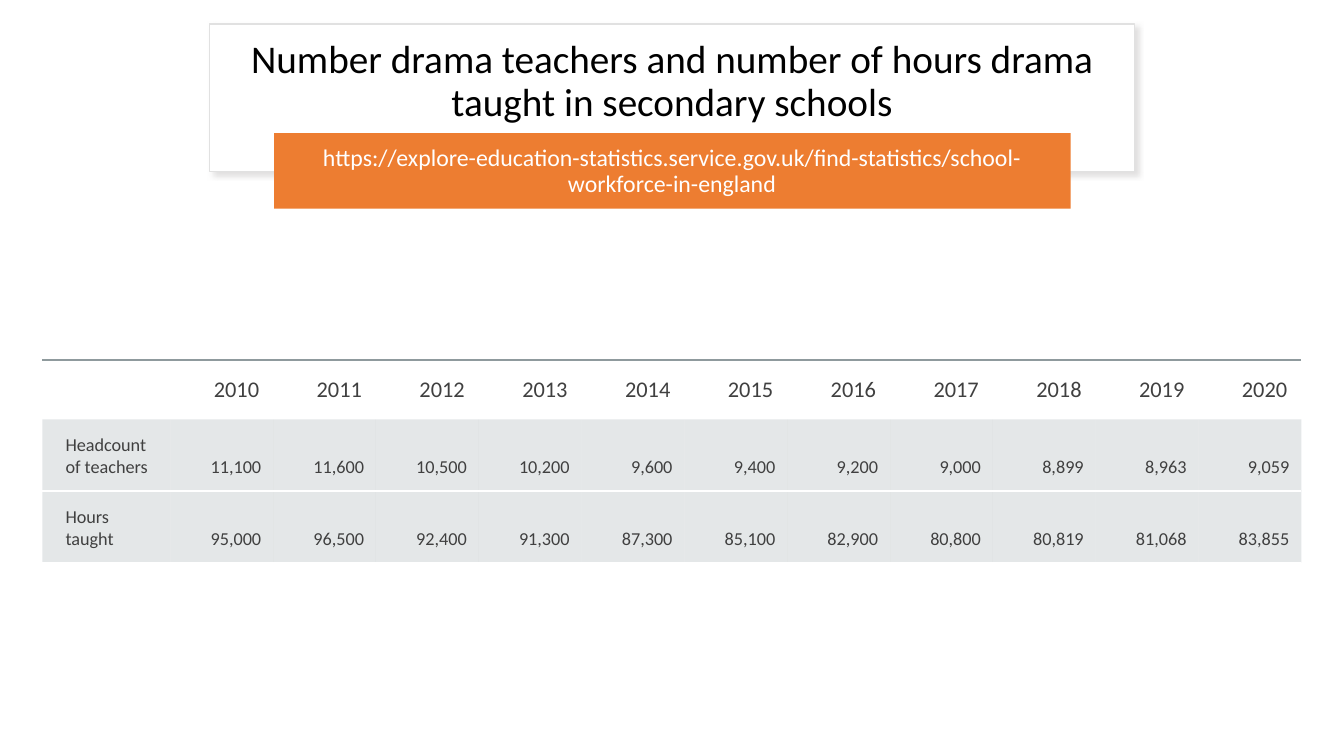
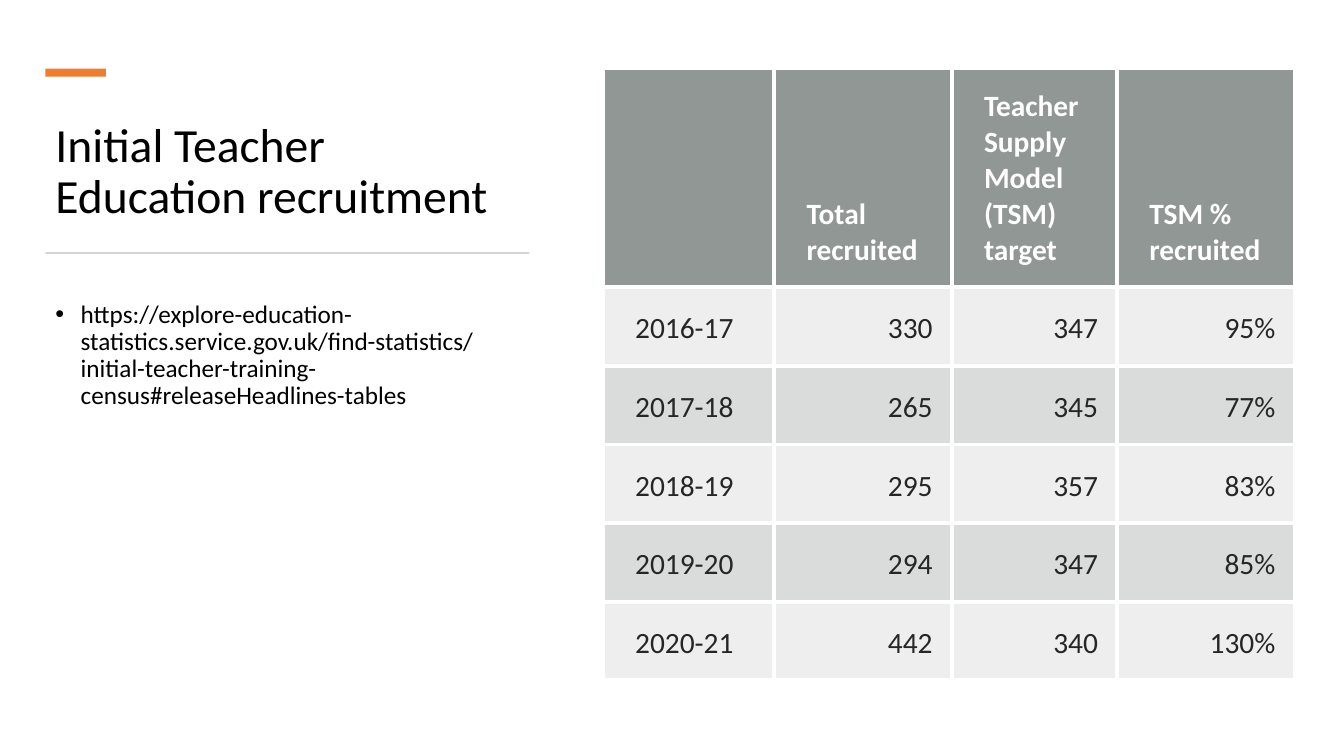
from lxml.etree import SubElement
from pptx import Presentation
from pptx.dml.color import RGBColor
from pptx.enum.shapes import MSO_SHAPE
from pptx.enum.text import MSO_ANCHOR, MSO_AUTO_SIZE, PP_ALIGN
from pptx.oxml import parse_xml
from pptx.oxml.ns import nsdecls, qn
from pptx.util import Pt

# Style: 100 px to the inch
PX = 9144
FONT = "Calibri"
NO_GRID = "{2D5ABB26-0587-4C30-8999-92F81FD0307C}"
BLACK = RGBColor(0x00, 0x00, 0x00)
WHITE = RGBColor(0xFF, 0xFF, 0xFF)
ORANGE = RGBColor(0xED, 0x7D, 0x31)
EDGE = RGBColor(0xE1, 0xE1, 0xE1)
SHADE = RGBColor(0xC5, 0xC3, 0xC3)
RULE = RGBColor(0xD5, 0xD5, 0xD5)
STEEL = RGBColor(0x8F, 0x9A, 0x9D)
MIST = RGBColor(0xB4, 0xBC, 0xBE)
SLATE = RGBColor(0x63, 0x6B, 0x68)
SAGE = RGBColor(0x87, 0x8E, 0x8B)
GREY = RGBColor(0x40, 0x40, 0x40)
INK = RGBColor(0x26, 0x26, 0x26)
LEFT, MID, RIGHT = PP_ALIGN.LEFT, PP_ALIGN.CENTER, PP_ALIGN.RIGHT


class Deck:
    def __init__(self, wide, high):
        self.show = Presentation()
        self.show.slide_width = wide * PX
        self.show.slide_height = high * PX
        self.slide = None

    def page(self):
        self.slide = self.show.slides.add_slide(self.show.slide_layouts[1])

    def style(self, para, size, color, align, bold=False):
        para.alignment = align
        for run in para.runs:
            font = run.font
            font.name, font.size, font.bold = FONT, Pt(size), bold
            font.color.rgb = color

    def box(self, x, y, wide, high, fill, line=None, shade=None):
        """Rectangle with an optional outline and soft shadow."""
        box = self.slide.shapes.add_shape(
            MSO_SHAPE.RECTANGLE, x * PX, y * PX, wide * PX, high * PX)
        box.shadow.inherit = False
        box.fill.solid()
        box.fill.fore_color.rgb = fill
        if line:
            box.line.color.rgb = line
            box.line.width = Pt(1)
        else:
            box.line.fill.background()
        if shade:
            glow = box.element.spPr.find(qn("a:effectLst"))
            glow.append(parse_xml(
                f'<a:outerShdw {nsdecls("a")} blurRad="{Pt(4)}" dist="{Pt(3)}" '
                f'dir="2700000" algn="tl" rotWithShape="0"><a:srgbClr val="{shade}">'
                '<a:alpha val="50000"/></a:srgbClr></a:outerShdw>'))

    def hold(self, slot, area, text, size, color, align, anchor):
        """Fill a placeholder and bring it to the front."""
        hold = self.slide.placeholders[slot]
        hold.left, hold.top, hold.width, hold.height = (n * PX for n in area)
        self.slide.shapes.element.append(hold.element)
        frame = hold.text_frame
        frame.text = text
        frame.word_wrap = True
        frame.auto_size = MSO_AUTO_SIZE.NONE
        frame.vertical_anchor = anchor
        para = frame.paragraphs[0]
        para.line_spacing = 0.9
        self.style(para, size, color, align)
        return para

    def title(self, area, text, size, align, anchor):
        self.hold(0, area, text, size, BLACK, align, anchor)

    def body(self, area, text, size, color, align, anchor, dot=False):
        para = self.hold(1, area, text, size, color, align, anchor)
        para.space_before = Pt(10)
        props = para._p.get_or_add_pPr()
        dent = 25 * PX if dot else 0
        props.set("marL", str(dent))
        props.set("indent", str(-dent))
        if dot:
            SubElement(props, qn("a:buFont"), typeface="Arial")
            SubElement(props, qn("a:buChar"), char="•")
        else:
            SubElement(props, qn("a:buNone"))

    def table(self, x, y, cols, rows):
        """Plain table without grid lines."""
        frame = self.slide.shapes.add_table(
            len(rows), len(cols), x * PX, y * PX, sum(cols) * PX, sum(rows) * PX)
        table = frame.table
        table.first_row = table.horz_banding = False
        frame.element.find(".//" + qn("a:tableStyleId")).text = NO_GRID
        for col, wide in zip(table.columns, cols):
            col.width = wide * PX
        for row, high in zip(table.rows, rows):
            row.height = high * PX
        return table

    def cell(self, cell, text, size, color, align, anchor, pads, fill=None,
             alpha=100, lines=None, bold=False):
        """Pads are left and other sides; lines map a side to its pen."""
        side, rest = (n * PX for n in pads)
        if text:
            cell.margin_left = side
            cell.margin_right = cell.margin_top = cell.margin_bottom = rest
            cell.vertical_anchor = anchor
            cell.text_frame.text = text
            self.style(cell.text_frame.paragraphs[0], size, color, align, bold)
        props = cell._tc.get_or_add_tcPr()
        if fill:
            cell.fill.solid()
            cell.fill.fore_color.rgb = fill
            tint = props.find(".//" + qn("a:srgbClr"))
            SubElement(tint, qn("a:alpha"), val=str(alpha * 1000))
        else:
            cell.fill.background()
        lines = lines or {}
        sides = [side for side in "LRTB" if side in lines]
        for spot, side in enumerate(sides):
            pen, width, clear = lines[side]
            props.insert(spot, parse_xml(
                f'<a:ln{side} {nsdecls("a")} w="{Pt(width)}"><a:solidFill>'
                f'<a:srgbClr val="{pen}"><a:alpha val="{clear * 1000}"/></a:srgbClr>'
                f'</a:solidFill><a:prstDash val="solid"/></a:ln{side}>'))


# Slide 1: teachers and hours by year
def hours(deck):
    deck.page()
    deck.box(208, 24, 917, 146, WHITE, EDGE, SHADE)
    deck.title((230, 34, 873, 95),
               "Number drama teachers and number of hours drama taught in secondary schools",
               28, MID, MSO_ANCHOR.MIDDLE)
    deck.box(272, 132, 790, 75, ORANGE)
    deck.body((286, 138, 761, 65),
              "https://explore-education-statistics.service.gov.uk/"
              "find-statistics/school-workforce-in-england",
              17, WHITE, MID, MSO_ANCHOR.MIDDLE)

    data = [
        ["", *(str(year) for year in range(2010, 2021))],
        ["Headcount of teachers", "11,100", "11,600", "10,500", "10,200", "9,600",
         "9,400", "9,200", "9,000", "8,899", "8,963", "9,059"],
        ["Hours taught", "95,000", "96,500", "92,400", "91,300", "87,300",
         "85,100", "82,900", "80,800", "80,819", "81,068", "83,855"],
    ]
    table = deck.table(42, 357, [127] + [102] * 11, [59, 71, 71])
    white = (WHITE, 1.5, 100)
    for r, row in enumerate(data):
        for c, text in enumerate(row):
            cell, align = table.cell(r, c), RIGHT if c else LEFT
            if r == 0:
                deck.cell(cell, text, 16, GREY, align, MSO_ANCHOR.MIDDLE, (23, 14),
                          lines={"T": (STEEL, 1.5, 60)})
            else:
                lines = {"B": white} if r == 1 else {"T": white, "B": white}
                deck.cell(cell, text, 13, GREY, align, MSO_ANCHOR.BOTTOM, (23, 12),
                          MIST, 35, lines)


# Slide 2: recruitment against target
def recruits(deck):
    deck.page()
    deck.title((45, 108, 486, 119), "Initial Teacher Education recruitment",
               34, LEFT, MSO_ANCHOR.BOTTOM)
    deck.box(45, 68, 60, 8, ORANGE)
    deck.box(45, 250, 480, 2, RULE)
    deck.body((45, 294, 486, 382),
              "https://explore-education-statistics.service.gov.uk/find-statistics/"
              "initial-teacher-training-census#releaseHeadlines-tables",
              18, BLACK, LEFT, MSO_ANCHOR.TOP, dot=True)

    data = [
        ["", "Total recruited", "Teacher Supply Model (TSM) target", "TSM % recruited"],
        ["2016-17", "330", "347", "95%"],
        ["2017-18", "265", "345", "77%"],
        ["2018-19", "295", "357", "83%"],
        ["2019-20", "294", "347", "85%"],
        ["2020-21", "442", "340", "130%"],
    ]
    table = deck.table(598, 68, [170, 176, 164, 176], [217] + [78] * 5)
    lines = dict.fromkeys("LRTB", (WHITE, 3, 100))
    for r, row in enumerate(data):
        head = r == 0
        fill, alpha = (SLATE, 70) if head else (SAGE, 15 if r % 2 else 30)
        for c, text in enumerate(row):
            deck.cell(table.cell(r, c), text, 21, WHITE if head else INK,
                      RIGHT if c and not head else LEFT, MSO_ANCHOR.BOTTOM,
                      (32, 19), fill, alpha, lines, head)


def main():
    deck = Deck(1333, 750)
    hours(deck)
    recruits(deck)
    deck.show.save("out.pptx")


if __name__ == "__main__":
    main()
